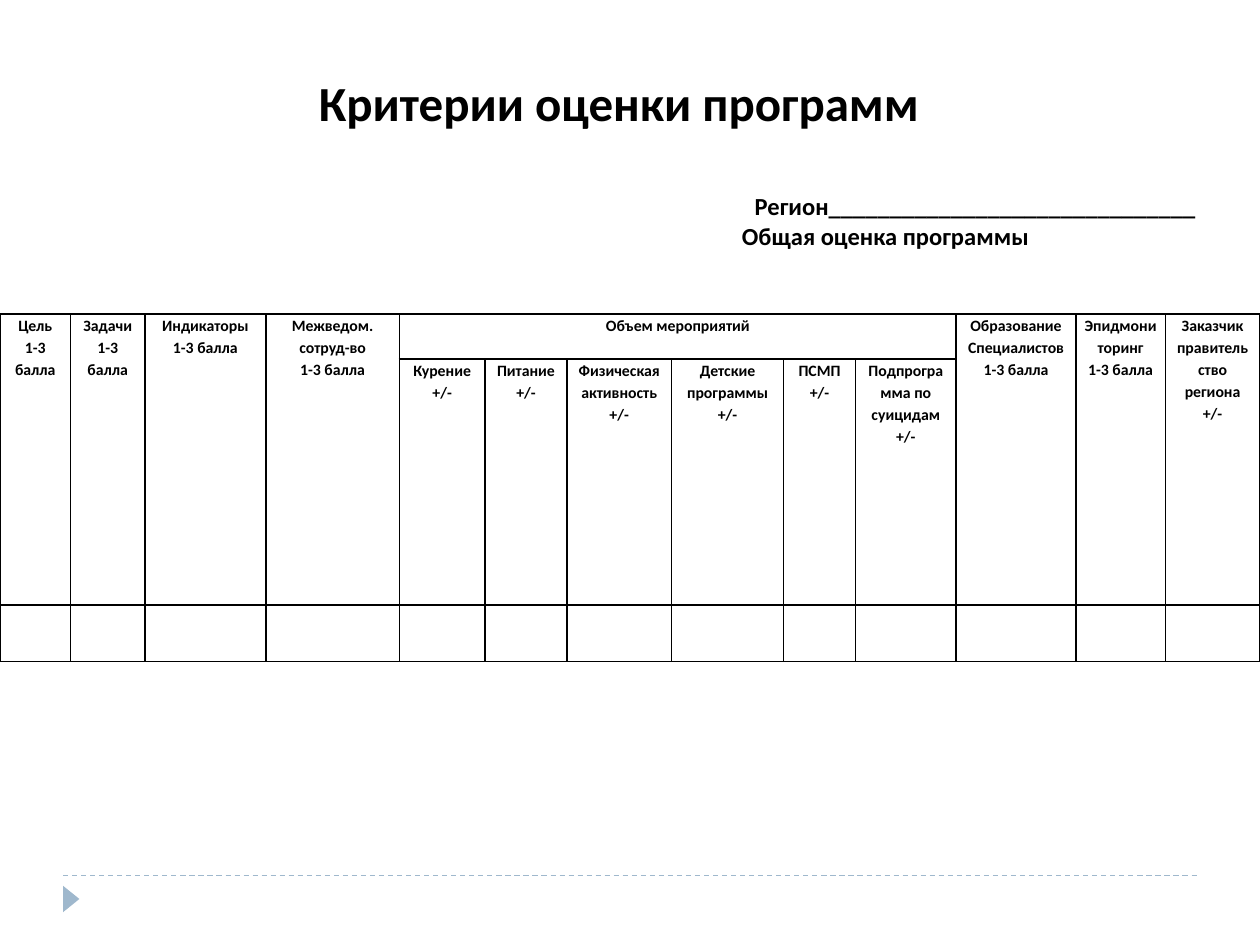
from lxml.etree import SubElement
from pptx import Presentation
from pptx.dml.color import RGBColor as RGB
from pptx.enum.dml import MSO_LINE_DASH_STYLE as Dash
from pptx.enum.shapes import MSO_CONNECTOR as Connector, MSO_SHAPE as Shape
from pptx.enum.text import MSO_ANCHOR as Anchor, PP_ALIGN as Align
from pptx.oxml import parse_xml
from pptx.oxml.ns import nsdecls, qn
from pptx.util import Inches, Pt

COLORS = {"text": "000000", "border": "000000", "accent": "9FB8CD"}
FONT = "Calibri"


def add_lines(frame, lines, size, align, spacing=1.0):
    """Write each line as a bold paragraph of its own."""
    for number, line in enumerate(lines):
        para = frame.add_paragraph() if number else frame.paragraphs[0]
        para.alignment, para.line_spacing = align, spacing
        span = para.add_run()
        span.text = line
        span.font.name, span.font.size, span.font.bold = FONT, Pt(size), True
        span.font.color.rgb = RGB.from_string(COLORS["text"])


def add_borders(cell):
    """Put a 1 pt line on all four sides; lines must precede the fill."""
    properties = cell._tc.get_or_add_tcPr()
    for position, side in enumerate("LRTB"):
        properties.insert(position, parse_xml(
            f'<a:ln{side} {nsdecls("a")} w="{Pt(1)}"><a:solidFill>'
            f'<a:srgbClr val="{COLORS["border"]}"/></a:solidFill></a:ln{side}>'))


deck = Presentation()
deck.slide_width, deck.slide_height = Inches(10), Inches(7.5)
page = deck.slides.add_slide(deck.slide_layouts[5])
shapes = page.shapes

# Footer rule and marker
rule = shapes.add_connector(Connector.STRAIGHT, Inches(0.5), Inches(6.95),
                            Inches(9.5), Inches(6.95))
rule.line.color.rgb = RGB.from_string(COLORS["accent"])
rule.line.width, rule.line.dash_style = Pt(0.75), Dash.DASH
SubElement(rule._element.spPr, qn("a:effectLst"))

marker = shapes.add_shape(Shape.ISOSCELES_TRIANGLE, Inches(0.46), Inches(7.07),
                          Inches(0.21), Inches(0.13))
marker.rotation = 90
marker.shadow.inherit = False
marker.fill.solid()
marker.fill.fore_color.rgb = RGB.from_string(COLORS["accent"])
marker.line.fill.background()

# Title
title = shapes.title
title.left, title.top = Inches(2.4), Inches(0.52)
title.width, title.height = Inches(5.02), Inches(0.57)
title.text_frame.word_wrap = False
title.text_frame.vertical_anchor = Anchor.MIDDLE
add_lines(title.text_frame, ["Критерии оценки программ"], 28, Align.CENTER)

# Region and overall score
region = shapes.add_textbox(Inches(5.79), Inches(1.47), Inches(3.8), Inches(0.57))
region.text_frame.word_wrap = True
add_lines(region.text_frame, ["Регион" + "_" * 30, "Общая оценка программы"],
          14, Align.RIGHT)
region.text_frame.paragraphs[1].alignment = Align.LEFT

# Criteria table: the activities share one heading, other headings span two rows
SCORE, MARK = "1-3 балла", "+/-"
WIDTHS = [0.56, 0.59, 0.96, 1.06, 0.68, 0.65, 0.83, 0.89, 0.57, 0.8, 0.95, 0.71, 0.75]
HEIGHTS = [0.36, 1.95, 0.45]
FIRST_ACTIVITY, LAST_ACTIVITY = 4, 9
HEADINGS = [
    ["Цель", SCORE],
    ["Задачи", SCORE],
    ["Индикаторы", SCORE],
    ["Межведом. сотруд-во", SCORE],
    ["Курение", MARK],
    ["Питание", MARK],
    ["Физическая активность", MARK],
    ["Детские программы", MARK],
    ["ПСМП", MARK],
    ["Подпрограмма по суицидам", MARK],
    ["Образование", "Специалистов", SCORE],
    ["Эпидмониторинг", SCORE],
    ["Заказчик правительство региона", MARK],
]

table = shapes.add_table(len(HEIGHTS), len(WIDTHS), 0, Inches(2.49),
                         Inches(sum(WIDTHS)), Inches(sum(HEIGHTS))).table
table.first_row = table.horz_banding = False
for column, width in zip(table.columns, WIDTHS):
    column.width = Inches(width)
for row, height in zip(table.rows, HEIGHTS):
    row.height = Inches(height)

for cell in table.iter_cells():
    cell.margin_left = cell.margin_right = Inches(0.07)
    cell.margin_top = cell.margin_bottom = 0
    cell.fill.background()
    add_borders(cell)

table.cell(0, FIRST_ACTIVITY).merge(table.cell(0, LAST_ACTIVITY))
add_lines(table.cell(0, FIRST_ACTIVITY).text_frame, ["Объем мероприятий"],
          9, Align.CENTER, 1.15)
for index, heading in enumerate(HEADINGS):
    is_activity = FIRST_ACTIVITY <= index <= LAST_ACTIVITY
    cell = table.cell(1 if is_activity else 0, index)
    if not is_activity:
        cell.merge(table.cell(1, index))
    add_lines(cell.text_frame, heading, 9, Align.CENTER, 1.15)

deck.save("out.pptx")
